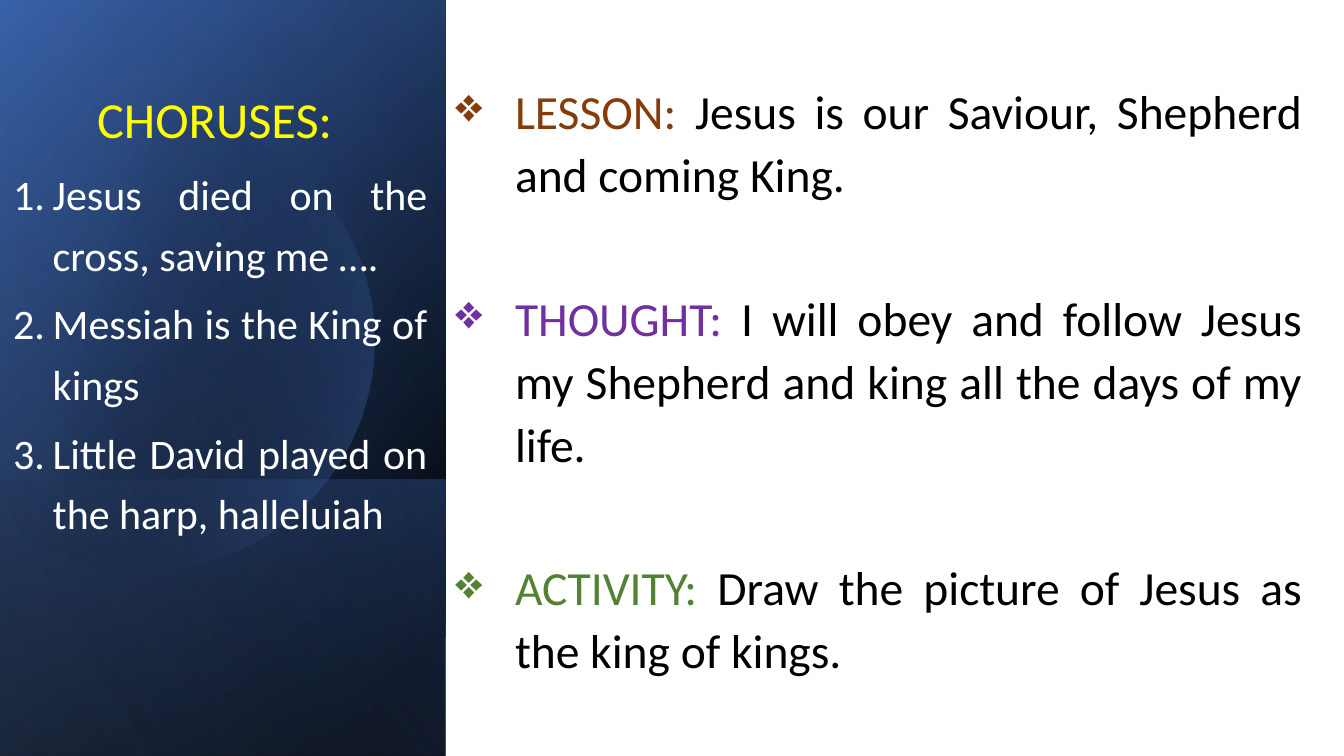
"""Builds a slide with a gradient chorus panel beside three lesson points."""
from math import acos, cos, pi, sin

from pptx import Presentation
from pptx.dml.color import RGBColor
from pptx.enum.shapes import MSO_SHAPE
from pptx.enum.text import MSO_ANCHOR, MSO_AUTO_SIZE, PP_ALIGN
from pptx.oxml import parse_xml
from pptx.oxml.ns import nsdecls, qn
from pptx.util import Cm, Pt

RECT = MSO_SHAPE.RECTANGLE
TOP, MIDDLE = MSO_ANCHOR.TOP, MSO_ANCHOR.MIDDLE
FIXED = MSO_AUTO_SIZE.NONE
CENTER, JUSTIFY = PP_ALIGN.CENTER, PP_ALIGN.JUSTIFY

BLACK = RGBColor(0x00, 0x00, 0x00)
WHITE = RGBColor(0xFF, 0xFF, 0xFF)
YELLOW = RGBColor(0xFF, 0xFF, 0x00)
BROWN = RGBColor(0x84, 0x3C, 0x0B)
PURPLE = RGBColor(0x70, 0x30, 0xA0)
GREEN = RGBColor(0x54, 0x82, 0x35)
NAVY = RGBColor(0x2F, 0x55, 0x97)
BLUE = RGBColor(0x44, 0x72, 0xC4)
PALE = RGBColor(0x8F, 0xAA, 0xDC)

FONT = "Calibri"
WIDE, HIGH, SIDE = 33.87, 19.05, 11.23

HEAD = [[("CHORUSES: ", YELLOW)]]
SONGS = [
    [("Jesus died on the cross, saving me ….", WHITE)],
    [("Messiah is the King of kings", WHITE)],
    [("Little David played on the harp, halleluiah", WHITE)],
]
POINTS = [
    [("LESSON: ", BROWN), ("Jesus is our Saviour, Shepherd and coming King.", BLACK)],
    [("THOUGHT: ", PURPLE),
     ("I will obey and follow Jesus my Shepherd and king all the days of my life.", BLACK)],
    [("ACTIVITY: ", GREEN), ("Draw the picture of Jesus as the king of kings.", BLACK)],
]

# Each stop is position, colour and opacity in percent.
BASE = [(8, BLACK, 100), (100, NAVY, 100)]
GLOW = [(0, BLACK, 0), (99, BLUE, 46)]
FOOT = [(2, BLUE, 29), (100, BLACK, 30)]
DISC = [(29, BLACK, 0), (100, BLUE, 43)]
VEIL = [(0, BLACK, 0), (99, PALE, 11)]


def shade(shape, stops, angle):
    """Give a shape a gradient with opacity and no line or shadow."""
    marks = "".join(
        f'<a:gs pos="{pos * 1000}"><a:srgbClr val="{tint}">'
        f'<a:alpha val="{clear * 1000}"/></a:srgbClr></a:gs>'
        for pos, tint, clear in stops)
    shape.shadow.inherit = False
    shape.line.fill.background()
    shape.fill.background()
    props = shape._element.spPr
    props.replace(props.find(qn("a:noFill")), parse_xml(
        f'<a:gradFill {nsdecls("a")} rotWithShape="1"><a:gsLst>{marks}</a:gsLst>'
        f'<a:lin ang="{angle * 60000}" scaled="0"/></a:gradFill>'))


def panel(slide, top, stops, angle):
    """Add a turned, mirrored panel from the given top to the slide's foot."""
    tall = HIGH - top
    shape = slide.shapes.add_shape(
        RECT, Cm((SIDE - tall) / 2), Cm(top + (tall - SIDE) / 2), Cm(tall), Cm(SIDE))
    shape.rotation = 90
    shape._element.spPr.xfrm.set("flipH", "1")
    shade(shape, stops, angle)


def disc(slide, x, y, radius, stops, angle):
    """Add a circle cut off at the slide's left edge."""
    reach = acos(-x / radius)
    steps = 120
    turns = [reach * (2 * i / steps - 1) for i in range(steps + 1)]
    dots = [(Cm(max(0, x + radius * cos(t))), Cm(y + radius * sin(t))) for t in turns]
    pen = slide.shapes.build_freeform(*dots[0])
    pen.add_line_segments(dots[1:], close=True)
    shade(pen.convert_to_shape(), stops, angle)


def write(shape, box, paras, size=30, align=JUSTIFY, anchor=TOP, lead=1.2,
          gap=0, hang=0, bullet=None):
    """Place a text shape and fill it with coloured runs."""
    shape.left, shape.top, shape.width, shape.height = map(Cm, box)
    frame = shape.text_frame
    frame.word_wrap, frame.auto_size = True, FIXED
    frame.vertical_anchor = anchor
    for i, parts in enumerate(paras):
        para = frame.add_paragraph() if i else frame.paragraphs[0]
        para.alignment, para.line_spacing = align, lead
        para.space_before, para.space_after = Pt(gap if i else 0), Pt(6)
        if bullet:
            props = para._p.get_or_add_pPr()
            props.set("marL", str(Cm(hang)))
            props.set("indent", str(-Cm(hang)))
            props.append(parse_xml(bullet))
        for words, tint in parts:
            run = para.add_run()
            run.text = words
            run.font.name, run.font.size = FONT, Pt(size)
            run.font.color.rgb = tint


def main():
    """Build and save the slide."""
    deck = Presentation()
    deck.slide_width, deck.slide_height = Cm(WIDE), Cm(HIGH)
    slide = deck.slides.add_slide(deck.slide_layouts[5])
    shapes = slide.shapes

    panel(slide, 0, BASE, 50)
    panel(slide, 0, GLOW, 30)
    panel(slide, 12.09, FOOT, 130)
    disc(slide, 3.66, 8.58, 5.79, DISC, 14)
    panel(slide, 0, VEIL, 120)

    star = f'<a:buChar {nsdecls("a")} char="❖"/>'
    count = f'<a:buAutoNum {nsdecls("a")} type="arabicPeriod"/>'
    title = shapes.title
    shapes._spTree.append(title._element)
    write(title, (0.08, 1.8, 10.95, 2.07), HEAD, size=36, align=CENTER)
    write(shapes.add_textbox(0, 0, 0, 0), (0.08, 3.87, 10.95, 9.82), SONGS,
          hang=1, bullet=count)
    write(shapes.add_textbox(0, 0, 0, 0), (11.23, 1.8, 21.84, 15.42), POINTS,
          size=34, anchor=MIDDLE, lead=1.1, gap=52, hang=1.5, bullet=star)
    deck.save("out.pptx")


if __name__ == "__main__":
    main()
